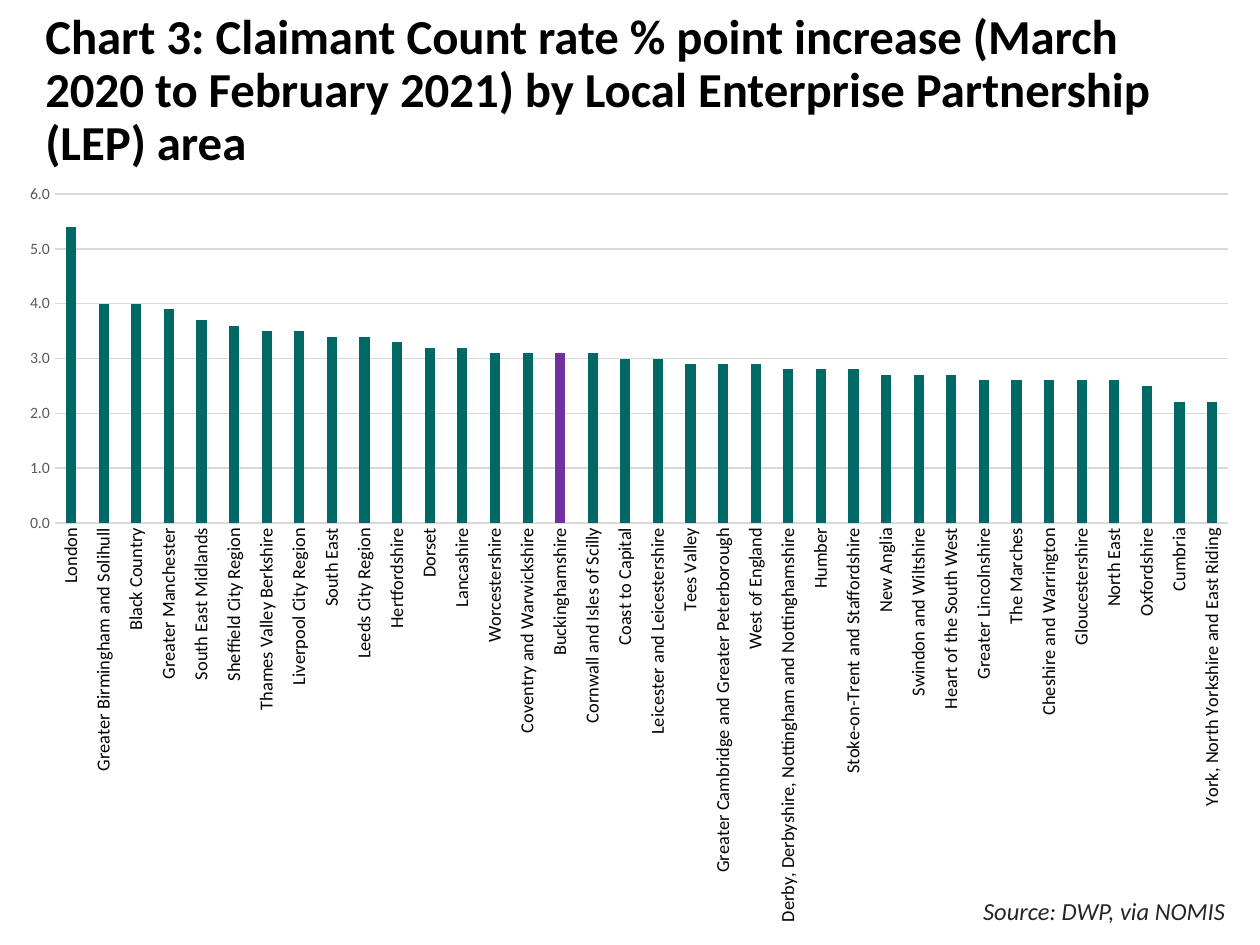
from copy import deepcopy

from pptx import Presentation
from pptx.chart.data import CategoryChartData
from pptx.dml.color import RGBColor
from pptx.enum.chart import XL_CHART_TYPE, XL_TICK_MARK
from pptx.enum.text import MSO_ANCHOR, MSO_AUTO_SIZE, PP_ALIGN
from pptx.oxml import parse_xml
from pptx.oxml.ns import nsdecls, qn
from pptx.util import Cm, Pt

COLUMN = XL_CHART_TYPE.COLUMN_CLUSTERED
NO_TICK = XL_TICK_MARK.NONE
MIDDLE, TOP = MSO_ANCHOR.MIDDLE, MSO_ANCHOR.TOP
LEFT, RIGHT = PP_ALIGN.LEFT, PP_ALIGN.RIGHT
NO_FIT = MSO_AUTO_SIZE.NONE

COLORS = {
    "black": "000000", "source": "262626", "scale": "595959",
    "grid": "D9D9D9", "bar": "006965", "focus": "7030A0",
}
FOCUS = "Buckinghamshire"
RATES = [
    ("London", 5.4), ("Greater Birmingham and Solihull", 4),
    ("Black Country", 4), ("Greater Manchester", 3.9),
    ("South East Midlands", 3.7), ("Sheffield City Region", 3.6),
    ("Thames Valley Berkshire", 3.5), ("Liverpool City Region", 3.5),
    ("South East", 3.4), ("Leeds City Region", 3.4),
    ("Hertfordshire", 3.3), ("Dorset", 3.2), ("Lancashire", 3.2),
    ("Worcestershire", 3.1), ("Coventry and Warwickshire", 3.1),
    (FOCUS, 3.1), ("Cornwall and Isles of Scilly", 3.1),
    ("Coast to Capital", 3), ("Leicester and Leicestershire", 3),
    ("Tees Valley", 2.9),
    ("Greater Cambridge and Greater Peterborough", 2.9),
    ("West of England", 2.9),
    ("Derby, Derbyshire, Nottingham and Nottinghamshire", 2.8),
    ("Humber", 2.8), ("Stoke-on-Trent and Staffordshire", 2.8),
    ("New Anglia", 2.7), ("Swindon and Wiltshire", 2.7),
    ("Heart of the South West", 2.7), ("Greater Lincolnshire", 2.6),
    ("The Marches", 2.6), ("Cheshire and Warrington", 2.6),
    ("Gloucestershire", 2.6), ("North East", 2.6), ("Oxfordshire", 2.5),
    ("Cumbria", 2.2), ("York, North Yorkshire and East Riding", 2.2),
]
PLOT = {"x": 0.04, "y": 0.03, "w": 0.94, "h": 0.43}


def assign(target, values):
    for name, value in values.items():
        setattr(target, name, value)


class Deck:
    """Holds the text style and the current slide."""

    def __init__(self, show, face="Calibri"):
        self.face = face
        self.slide = show.slides.add_slide(show.slide_layouts[5])

    def style(self, font, color, **values):
        assign(font, {"name": self.face, **values})
        font.color.rgb = RGBColor.from_string(COLORS[color])

    def line(self, line, color):
        line.color.rgb = RGBColor.from_string(COLORS[color])
        line.width = Pt(0.75)

    def fill_text(self, shape, text, anchor, align, color, **values):
        frame = shape.text_frame
        assign(frame, {"word_wrap": True, "auto_size": NO_FIT,
                       "vertical_anchor": anchor})
        para = frame.paragraphs[0]
        para.text = text
        para.alignment = align
        for run in para.runs:
            self.style(run.font, color, **values)
        return para

    def title(self, box, text):
        shape = self.slide.shapes.title
        assign(shape, dict(zip(("left", "top", "width", "height"), box)))
        para = self.fill_text(shape, text, MIDDLE, LEFT, "black",
                              size=Pt(27.9), bold=True)
        para.line_spacing = 0.9
        # The closing line break takes the size of the text before it.
        for mark in para._p.findall(qn("a:br")):
            mark.append(deepcopy(para.runs[0]._r.rPr))

    def label(self, box, text):
        shape = self.slide.shapes.add_textbox(*box)
        self.fill_text(shape, text, TOP, RIGHT, "source",
                       size=Pt(14), italic=True)

    def chart(self, box, rates):
        data = CategoryChartData(number_format="0.0")
        data.categories = [area for area, rate in rates]
        data.add_series("Series 1", [rate for area, rate in rates])
        chart = self.slide.shapes.add_chart(COLUMN, *box, data).chart
        assign(chart, {"has_legend": False, "has_title": False})
        self.style(chart.font, "black", size=Pt(10))
        self.bars(chart.plots[0], rates)
        self.axes(chart)
        self.layout(chart)

    def bars(self, plot, rates):
        assign(plot, {"gap_width": 219, "overlap": -27,
                      "vary_by_categories": False})
        series = plot.series[0]
        focus = [area for area, rate in rates].index(FOCUS)
        for item, color in ((series, "bar"), (series.points[focus], "focus")):
            item.format.fill.solid()
            item.format.fill.fore_color.rgb = RGBColor.from_string(COLORS[color])

    def axes(self, chart):
        areas, scale = chart.category_axis, chart.value_axis
        for axis, color, size in ((areas, "black", 10.5), (scale, "scale", 9)):
            assign(axis, {"major_tick_mark": NO_TICK,
                          "minor_tick_mark": NO_TICK})
            self.style(axis.tick_labels.font, color, size=Pt(size))
        self.line(areas.format.line, "grid")
        turn = areas._element.find(qn("c:txPr")).find(qn("a:bodyPr"))
        turn.set("rot", "-5400000")
        turn.set("vert", "horz")
        assign(scale, {"minimum_scale": 0, "maximum_scale": 6,
                       "major_unit": 1, "has_major_gridlines": True})
        assign(scale.tick_labels, {"number_format": "#,##0.0",
                                   "number_format_is_linked": False})
        scale.format.line.fill.background()
        self.line(scale.major_gridlines.format.line, "grid")

    def layout(self, chart):
        """Fix the inner plot area as shares of the chart."""
        area = chart._chartSpace.chart.plotArea
        for old in area.findall(qn("c:layout")):
            area.remove(old)
        sizes = "".join(f'<c:{key} val="{val}"/>' for key, val in PLOT.items())
        area.insert(0, parse_xml(
            f'<c:layout {nsdecls("c")}><c:manualLayout>'
            '<c:layoutTarget val="inner"/>'
            '<c:xMode val="edge"/><c:yMode val="edge"/>'
            f'{sizes}</c:manualLayout></c:layout>'))


def main():
    show = Presentation()
    assign(show, {"slide_width": Cm(25.4), "slide_height": Cm(19.05)})
    deck = Deck(show)
    deck.title((Cm(0.66), Cm(1.14), Cm(24.08), Cm(2.6)),
               "Chart 3: Claimant Count rate % point increase (March 2020 to "
               "February 2021) by Local Enterprise Partnership (LEP) area\v")
    deck.label((Cm(18.9), Cm(17.93), Cm(6.05), Cm(0.86)),
               "Source: DWP, via NOMIS")
    deck.chart((Cm(0.1), Cm(3.45), Cm(25.17), Cm(15.42)), RATES)
    show.save("out.pptx")


if __name__ == "__main__":
    main()
